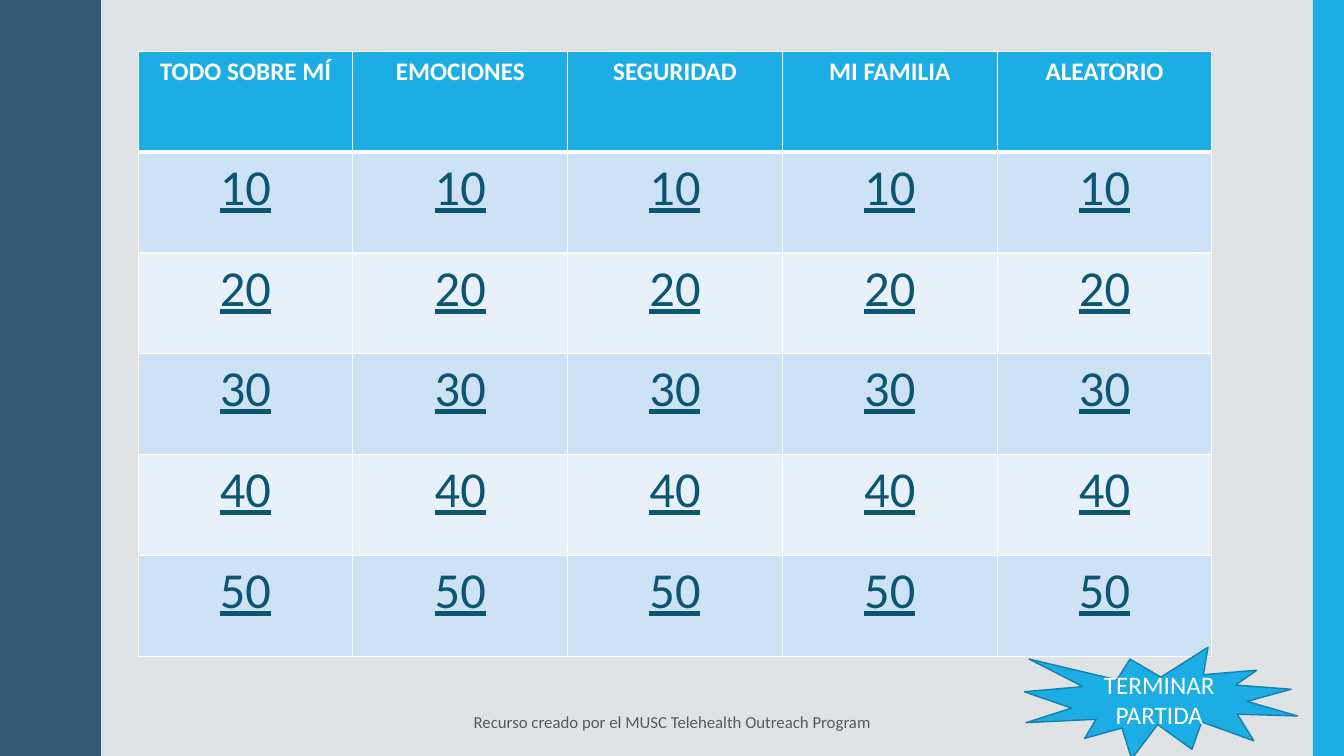
import pptx
import pptx.util
from lxml import etree
from pptx.dml.color import RGBColor
from pptx.enum.shapes import MSO_SHAPE
from pptx.enum.text import MSO_ANCHOR, PP_ALIGN
from pptx.oxml.ns import qn
from pptx.util import Inches, Pt

CATEGORIES = ["TODO SOBRE MÍ", "EMOCIONES", "SEGURIDAD", "MI FAMILIA", "ALEATORIO"]
POINTS = ["10", "20", "30", "40", "50"]
END_LABEL = "TERMINAR PARTIDA"
CREDIT = "Recurso creado por el MUSC Telehealth Outreach Program"

BACKGROUND = RGBColor(0xDF, 0xE3, 0xE5)
NAVY = RGBColor(0x33, 0x5B, 0x74)
BLUE = RGBColor(0x1C, 0xAD, 0xE4)
SEAL_LINE = RGBColor(0x15, 0x80, 0xA9)
BANDS = [RGBColor(0xCD, 0xE3, 0xF5), RGBColor(0xE8, 0xF1, 0xFA)]
LINK = RGBColor(0x0D, 0x56, 0x72)
WHITE = RGBColor(0xFF, 0xFF, 0xFF)
GREY = RGBColor(0x59, 0x59, 0x59)

HEADER_FONT = {"size": Pt(18), "bold": True, "color": WHITE}
POINTS_FONT = {"size": Pt(36), "bold": False, "underline": True, "color": LINK}
SEAL_FONT = {"size": Pt(18), "color": WHITE}
CREDIT_FONT = {"size": Pt(12), "color": GREY}

SLIDE_WIDTH, SLIDE_HEIGHT = 13.33, 7.5
COLUMN_WIDTH, ROW_HEIGHT = 2.13, 1.0

# One swing of the wavy edge, from trough to crest
SWING = [(0.78, 0), (0.78, 0.07), (0.79, 0.14), (0.8, 0.2), (0.81, 0.25),
         (0.83, 0.29), (0.85, 0.33), (0.87, 0.38), (0.89, 0.42), (0.91, 0.46),
         (0.93, 0.5), (0.95, 0.55), (0.96, 0.61), (0.97, 0.68), (0.97, 0.75)]
SWING_HEIGHT, SWING_COUNT = 0.75, 10


def write(text_frame, text, font_values):
    text_frame.word_wrap = True
    paragraph = text_frame.paragraphs[0]
    paragraph.alignment = PP_ALIGN.CENTER
    run = paragraph.add_run()
    run.text = text
    run.font.name = "Calibri"
    for name, value in font_values.items():
        if name == "color":
            run.font.color.rgb = value
        else:
            setattr(run.font, name, value)


def paint(shape, fill, line=None):
    shape.shadow.inherit = False
    shape.fill.solid()
    shape.fill.fore_color.rgb = fill
    if line is None:
        shape.line.fill.background()
    else:
        shape.line.color.rgb = line
        shape.line.width = Pt(1)


def set_borders(cell, widths):
    """Give the cell white borders; widths maps sides to points."""
    properties = cell._tc.get_or_add_tcPr()
    for index, side in enumerate("LRTB"):
        border = etree.Element(qn(f"a:ln{side}"), w=str(Pt(widths.get(side, 1))))
        fill = etree.SubElement(border, qn("a:solidFill"))
        etree.SubElement(fill, qn("a:srgbClr"), val=str(WHITE))
        properties.insert(index, border)


def add_wave(slide):
    edge = []
    for swing in range(SWING_COUNT):
        top = swing * SWING_HEIGHT
        if swing % 2 == 0:
            edge += [(x, top + y) for x, y in SWING]
        else:
            edge += [(x, top + SWING_HEIGHT - y) for x, y in reversed(SWING)]
    outline = edge + [(0, SLIDE_HEIGHT)]
    builder = slide.shapes.build_freeform(0, 0, scale=Inches(1))
    builder.add_line_segments(outline, close=True)
    paint(builder.convert_to_shape(), NAVY)


def add_board(slide):
    rows, columns = len(POINTS) + 1, len(CATEGORIES)
    board = slide.shapes.add_table(
        rows, columns, Inches(1.37), Inches(0.51),
        Inches(columns * COLUMN_WIDTH), Inches(rows * ROW_HEIGHT)).table
    for column in board.columns:
        column.width = Inches(COLUMN_WIDTH)
    contents = [CATEGORIES] + [[value] * columns for value in POINTS]
    for row_index, texts in enumerate(contents):
        board.rows[row_index].height = Inches(ROW_HEIGHT)
        if row_index == 0:
            fill, font_values, widths = BLUE, HEADER_FONT, {"B": 3}
        else:
            fill, font_values = BANDS[(row_index - 1) % 2], POINTS_FONT
            widths = {"T": 3} if row_index == 1 else {}
        for column_index, text in enumerate(texts):
            cell = board.cell(row_index, column_index)
            cell.fill.solid()
            cell.fill.fore_color.rgb = fill
            set_borders(cell, widths)
            write(cell.text_frame, text, font_values)


def main():
    presentation = pptx.Presentation()
    presentation.slide_width = Inches(SLIDE_WIDTH)
    presentation.slide_height = Inches(SLIDE_HEIGHT)
    slide = presentation.slides.add_slide(presentation.slide_layouts[6])
    slide.background.fill.solid()
    slide.background.fill.fore_color.rgb = BACKGROUND

    add_wave(slide)
    side_bar = slide.shapes.add_shape(
        MSO_SHAPE.RECTANGLE, Inches(13.02), 0, Inches(0.31), Inches(SLIDE_HEIGHT))
    paint(side_bar, BLUE)
    add_board(slide)

    seal = slide.shapes.add_shape(
        MSO_SHAPE.EXPLOSION1, Inches(10.16), Inches(6.42), Inches(2.71), Inches(1.11))
    paint(seal, BLUE, SEAL_LINE)
    credit = slide.shapes.add_textbox(
        Inches(4.42), Inches(6.97), Inches(4.5), Inches(0.38))
    for shape, text, font_values in [(seal, END_LABEL, SEAL_FONT),
                                     (credit, CREDIT, CREDIT_FONT)]:
        shape.text_frame.vertical_anchor = MSO_ANCHOR.MIDDLE
        write(shape.text_frame, text, font_values)

    presentation.save("out.pptx")


if __name__ == "__main__":
    main()
